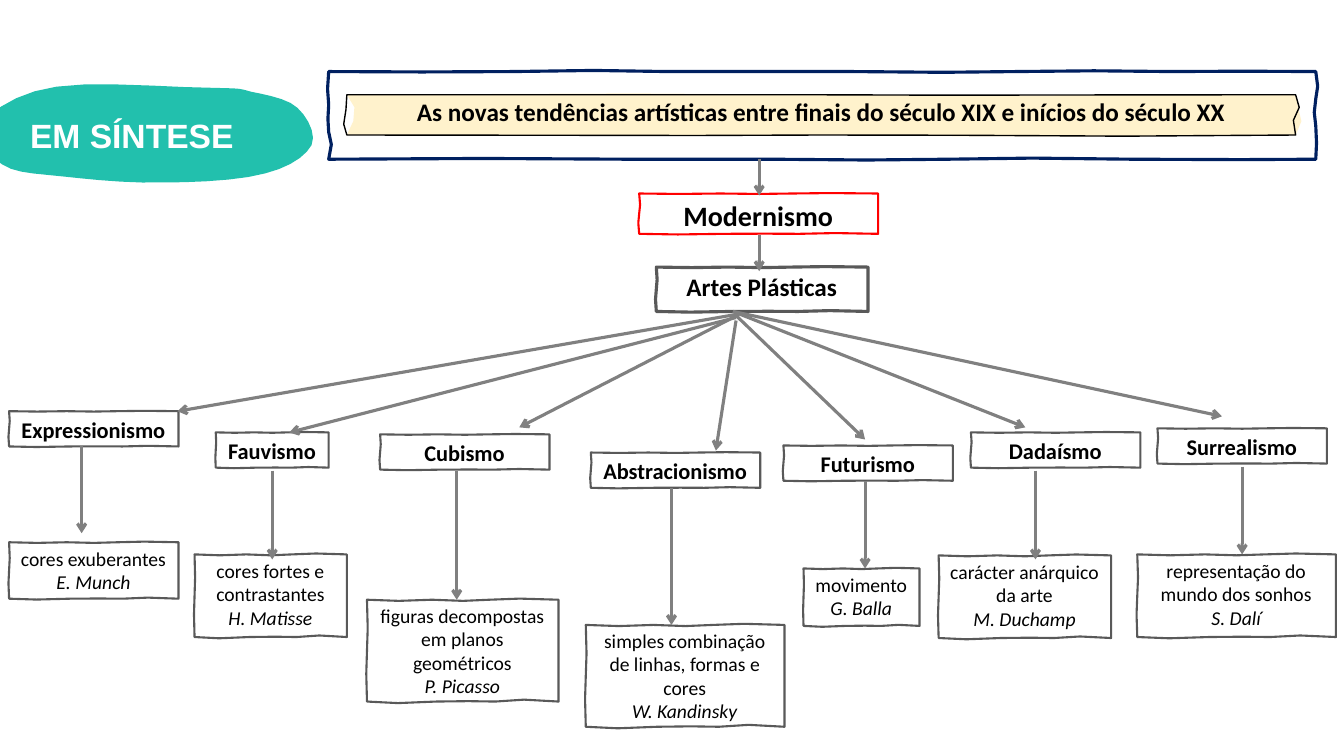
from lxml.etree import SubElement
from pptx import Presentation
from pptx.dml.color import RGBColor
from pptx.enum.shapes import MSO_CONNECTOR
from pptx.enum.text import MSO_ANCHOR, PP_ALIGN
from pptx.oxml.ns import qn
from pptx.util import Inches, Pt

COLS, ROWS = 13.33, 7.5
CELL = Inches(1)
GREY, EDGE, BLACK = "808080", "595959", "000000"
HEAD = {"name": "Calibri", "size": Pt(16), "bold": True}
BODY = {"name": "Calibri", "size": Pt(14), "bold": False}

SKETCH = [(0, 0), (.12, .01), (.21, .02), (.34, 0), (.47, -.01), (.54, .04), (.64, 0),
          (.75, -.03), (.83, 0), (1, 0), (1, .23), (1, .34), (1, .51), (1, .68), (1, .84),
          (1, 1), (.87, .98), (.76, .97), (.67, 1), (.57, 1.02), (.5, .97), (.36, 1),
          (.22, 1.03), (.09, 1.01), (0, 1), (0, .81), (-.01, .63), (0, .5), (.01, .38),
          (0, .2), (0, 0)]
BLOB = [(2.07, .87), (1.75, .87), (.93, .8), (.56, .86), (.18, .91), (-.09, 1.1),
        (-.18, 1.23), (-.27, 1.36), (-.11, 1.54), (.02, 1.63), (.15, 1.72), (.35, 1.72),
        (.62, 1.75), (.89, 1.78), (1.28, 1.82), (1.62, 1.81), (1.95, 1.81), (2.38, 1.79),
        (2.63, 1.72), (2.87, 1.66), (3.03, 1.55), (3.09, 1.44), (3.14, 1.33), (3.05, 1.16),
        (2.95, 1.07), (2.86, .98), (2.64, .94), (2.49, .91), (2.35, .87), (2.39, .88),
        (2.07, .87)]
FRAME = [(3.26, .71), (3.86, .72), (4.52, .71), (5.09, .71), (5.66, .7), (6.14, .69),
         (6.62, .71), (7.11, .72), (7.68, .7), (8.45, .71), (9.22, .72), (9.53, .72),
         (10.08, .71), (10.64, .69), (11.06, .71), (11.62, .71), (12.18, .71), (12.45, .7),
         (13.05, .71), (13.1, .82), (13.05, .9), (13.05, .98), (13.06, 1.06), (13, 1.17),
         (13.05, 1.25), (13.11, 1.33), (13.01, 1.51), (13.05, 1.58), (12.64, 1.58),
         (12.09, 1.59), (11.23, 1.58), (10.36, 1.57), (10.06, 1.56), (9.4, 1.58),
         (8.74, 1.6), (8.49, 1.58), (7.67, 1.58), (6.85, 1.58), (6.88, 1.58), (6.23, 1.58),
         (5.59, 1.59), (4.05, 1.55), (3.26, 1.58), (3.3, 1.47), (3.29, 1.39), (3.26, 1.31),
         (3.23, 1.22), (3.27, 1.14), (3.26, 1.04), (3.26, .94), (3.23, .83), (3.26, .71)]
BAND_FILL = [(3.44, .94), (4.92, .94), (6.04, .91), (8.05, .94), (10.05, .97), (11.8, .92),
             (12.85, .94), (12.85, 1.11), (12.98, 1.18), (12.85, 1.34), (11.25, 1.36),
             (9.31, 1.36), (8.33, 1.34), (7.35, 1.32), (5.46, 1.37), (3.44, 1.34),
             (3.52, 1.21), (3.57, 1.05), (3.44, .94)]
BAND_EDGE = [(3.44, .94), (4.99, .94), (6.58, .94), (7.95, .94), (9.32, .95), (10.8, .94),
             (12.85, .94), (12.99, 1.07), (12.73, 1.18), (12.85, 1.34), (11.19, 1.37),
             (9.3, 1.33), (8.14, 1.34), (6.99, 1.35), (5.62, 1.34), (3.44, 1.34),
             (3.36, 1.26), (3.46, 1.08), (3.44, .94)]

# name, name box, feature, artist, feature box, fan arrow, drop arrow
MOVEMENTS = [
    ("Expressionismo", (.09, 4.08, 1.68, .35), "cores exuberantes", "E. Munch",
     (.09, 5.38, 1.68, .56), (7.3, 3.12, 1.76, 4.08), (.81, 4.42, .81, 5.29)),
    ("Fauvismo", (2.14, 4.29, 1.12, .35), "cores fortes e contrastantes", "H. Matisse",
     (1.93, 5.5, 1.51, .82), (7.3, 3.15, 2.87, 4.29), (2.7, 4.67, 2.7, 5.55)),
    ("Cubismo", (3.77, 4.31, 1.68, .35), "figuras decompostas em planos geométricos",
     "P. Picasso", (3.64, 5.95, 1.9, 1.01), (7.33, 3.12, 5.15, 4.24), (4.53, 4.67, 4.53, 5.95)),
    ("Abstracionismo", (5.86, 4.49, 1.68, .35), "simples combinação de linhas, formas e cores",
     "W. Kandinsky", (5.81, 6.2, 1.97, 1.01), (7.3, 3.18, 7.1, 4.47), (6.66, 4.84, 6.66, 6.2)),
    ("Futurismo", (7.77, 4.42, 1.68, .35), "movimento", "G. Balla",
     (7.97, 5.64, 1.15, .57), (7.3, 3.13, 8.58, 4.36), (8.58, 4.77, 8.58, 5.64)),
    ("Dadaísmo", (9.63, 4.29, 1.68, .35), "carácter anárquico da arte", "M. Duchamp",
     (9.31, 5.51, 1.71, .82), (7.27, 3.09, 10.17, 4.24), (10.27, 4.67, 10.27, 5.55)),
    ("Surrealismo", (11.48, 4.25, 1.68, .35), "representação do mundo dos sonhos", "S. Dalí",
     (11.28, 5.5, 1.97, .82), (7.27, 3.09, 12.12, 4.13), (12.32, 4.63, 12.32, 5.5)),
]


def grid(*cells):
    """Turn grid positions into slide lengths."""
    return [round(c * CELL) for c in cells]


def rgb(hex_color):
    """Read a colour from its hex string."""
    return RGBColor.from_string(hex_color)


def bezier(a, b, c, d, t):
    """Return the point at share t of a cubic curve."""
    u = 1 - t
    return tuple(u**3 * i + 3 * u * u * t * j + 3 * u * t * t * k + t**3 * m
                 for i, j, k, m in zip(a, b, c, d))


def add_outline(s, curve, fill=None, line=None, width=1.5, steps=2):
    """Draw a closed outline through a chain of cubic curves."""
    points = [grid(*bezier(*curve[i:i + 4], n / steps))
              for i in range(0, len(curve) - 1, 3) for n in range(1, steps + 1)]
    builder = s.shapes.build_freeform(*grid(*curve[0]), scale=1.0)
    builder.add_line_segments(points[:-1], close=True)
    sp = builder.convert_to_shape()
    sp.shadow.inherit = False
    if fill:
        sp.fill.solid()
        sp.fill.fore_color.rgb = rgb(fill)
    else:
        sp.fill.background()
    if line:
        sp.line.color.rgb = rgb(line)
        sp.line.width = Pt(width)
    else:
        sp.line.fill.background()
    return sp


def write(sp, lines, align=PP_ALIGN.CENTER, color=BLACK, anchor=MSO_ANCHOR.TOP):
    """Fill a shape with paragraphs given as text and font values."""
    tf = sp.text_frame
    tf.word_wrap = True
    tf.vertical_anchor = anchor
    for i, (text, fmt) in enumerate(lines):
        p = tf.add_paragraph() if i else tf.paragraphs[0]
        p.alignment = align
        r = p.add_run()
        r.text = text
        r.font.color.rgb = rgb(color)
        for key, value in fmt.items():
            setattr(r.font, key, value)


def add_box(s, box, lines, line=EDGE, width=1.5):
    """Add a hand-drawn box with centred text."""
    x, y, w, h = box
    curve = [(x + w * i, y + h * j) for i, j in SKETCH]
    write(add_outline(s, curve, line=line, width=width), lines)


def add_arrow(s, ends):
    """Add a grey arrow between two grid points."""
    c = s.shapes.add_connector(MSO_CONNECTOR.STRAIGHT, *grid(*ends))
    c.line.color.rgb = rgb(GREY)
    c.line.width = Pt(2.25)
    spPr = c.element.spPr
    SubElement(spPr.find(qn("a:ln")), qn("a:tailEnd"), type="arrow")
    SubElement(spPr, qn("a:effectLst"))


def add_banner(s):
    """Add the framed band and set the title on it."""
    add_outline(s, FRAME, line="002060", width=2.25)
    add_outline(s, BAND_FILL, fill="FFF2CC", steps=3)
    add_outline(s, BAND_EDGE, line=BLACK, width=1, steps=3)
    title = s.shapes.title
    title.left, title.top, title.width, title.height = grid(3.44, .92, 9.41, .4)
    write(title, [("As novas tendências artísticas entre finais do século XIX "
                   "e inícios do século XX", HEAD | {"size": Pt(18)})],
          anchor=MSO_ANCHOR.MIDDLE)
    title.text_frame.paragraphs[0].line_spacing = .9
    title.element.getparent().append(title.element)


def add_label(s):
    """Add the summary label on its green blob."""
    add_outline(s, BLOB, fill="22C0AD", steps=5)
    sp = s.shapes.add_textbox(*grid(.2, 1.09, 2.77, .51))
    write(sp, [("EM SÍNTESE", {"name": "Arial", "size": Pt(24), "bold": True})],
          PP_ALIGN.LEFT, "FFFFFF")


def main():
    """Build the slide and save it."""
    prs = Presentation()
    prs.slide_width, prs.slide_height = grid(COLS, ROWS)
    s = prs.slides.add_slide(prs.slide_layouts[5])
    add_label(s)
    add_banner(s)
    add_box(s, (6.51, 2.65, 2.1, .44), [("Artes Plásticas", HEAD | {"size": Pt(18)})], width=2.25)
    add_box(s, (6.34, 1.92, 2.37, .4), [("Modernismo", HEAD | {"size": Pt(20)})], "FF0000")
    for top in (1.58, 2.33):
        add_arrow(s, (7.53, top, 7.53, top + .36))
    for name, name_box, feature, artist, feature_box, fan, drop in MOVEMENTS:
        add_box(s, name_box, [(name, HEAD)])
        add_box(s, feature_box, [(feature, BODY), (artist, BODY | {"italic": True})])
        add_arrow(s, fan)
        add_arrow(s, drop)
    prs.save("out.pptx")


if __name__ == "__main__":
    main()
